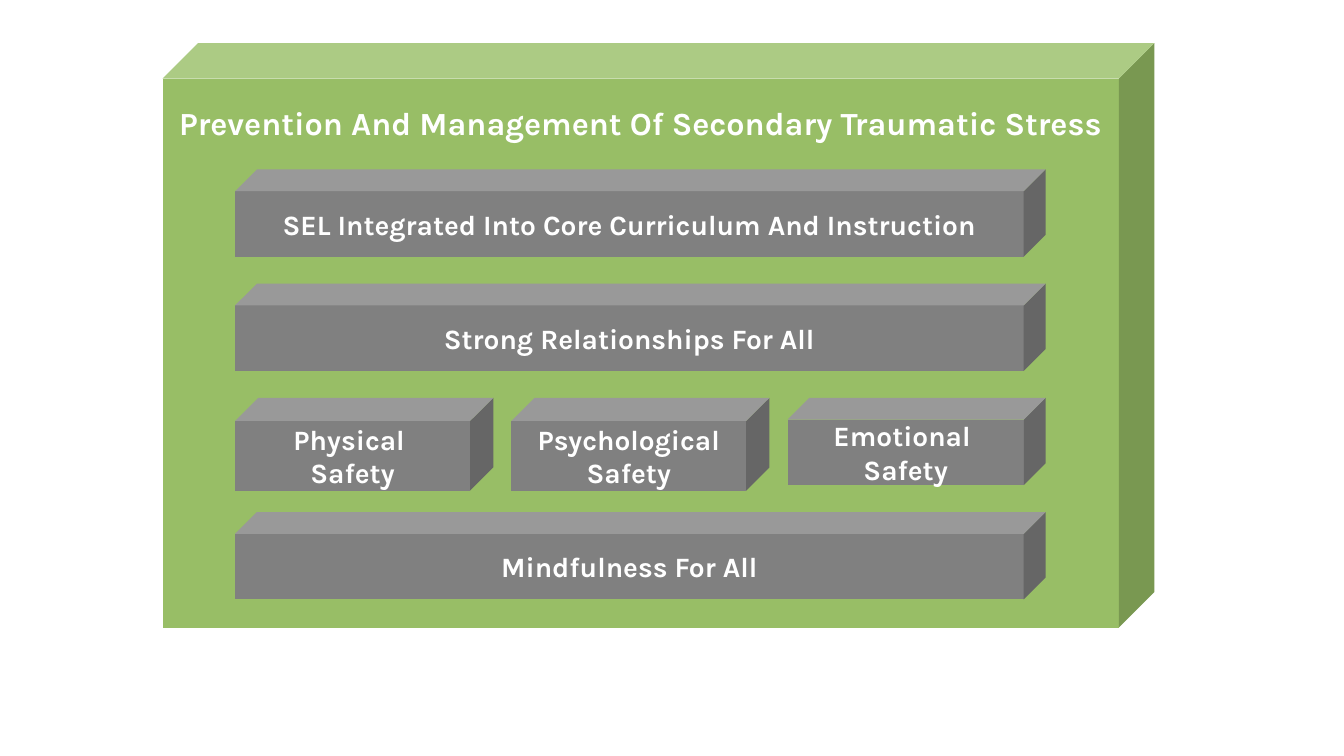
from pptx import Presentation
from pptx.dml.color import RGBColor
from pptx.enum.shapes import MSO_SHAPE
from pptx.enum.text import MSO_ANCHOR, PP_ALIGN
from pptx.util import Inches, Pt

CUBE = MSO_SHAPE.CUBE
TOP, MIDDLE = MSO_ANCHOR.TOP, MSO_ANCHOR.MIDDLE
CENTER = PP_ALIGN.CENTER
COLORS = {"frame": "98BE66", "block": "808080", "text": "FFFFFF"}
FONT = "Karla"

# Widescreen page, 16 to 9
deck = Presentation()
deck.slide_width = Inches(10)
deck.slide_height = Inches(10 * 9 / 16)
page = deck.slides.add_slide(deck.slide_layouts[6])


def add_cube(left, top, width, height, lines, color, size=15, anchor=MIDDLE, inset=0):
    cube = page.shapes.add_shape(
        CUBE, Inches(left), Inches(top), Inches(width), Inches(height))
    cube.shadow.inherit = False
    cube.fill.solid()
    cube.fill.fore_color.rgb = RGBColor.from_string(COLORS[color])
    cube.line.fill.background()
    frame = cube.text_frame
    frame.word_wrap = True
    frame.vertical_anchor = anchor
    frame.margin_left = frame.margin_right = frame.margin_bottom = 0
    frame.margin_top = Inches(inset)
    for index, line in enumerate(lines):
        para = frame.add_paragraph() if index else frame.paragraphs[0]
        para.alignment = CENTER
        span = para.add_run()
        span.text = line
        span.font.name = FONT
        span.font.size = Pt(size)
        span.font.bold = True
        span.font.color.rgb = RGBColor.from_string(COLORS["text"])
    return cube


# Surrounding frame with the title near the top of its front face
frame_cube = add_cube(
    1.21, 0.32, 7.38, 4.35,
    ["Prevention And Management Of Secondary Traumatic Stress"],
    "frame", size=17.25, anchor=TOP, inset=0.18)
frame_cube.adjustments[0] = 0.061

# Rows share a left edge and an equal vertical step
LEFT, FIRST_ROW, ROW_STEP = 1.75, 1.26, 0.85
BAR_WIDTH, BLOCK_WIDTH = 6.03, 1.92
COLUMN_STEP = (BAR_WIDTH - BLOCK_WIDTH) / 2

# Full-width bars
bars = [
    (0, "SEL Integrated Into Core Curriculum And Instruction"),
    (1, "Strong Relationships For All"),
    (3, "Mindfulness For All"),
]
for row, label in bars:
    add_cube(LEFT, FIRST_ROW + row * ROW_STEP, BAR_WIDTH, 0.65, [label], "block")

# Three safety blocks in the third row
safety_blocks = [
    (["Physical ", "Safety"], 0.69),
    (["Psychological Safety"], 0.69),
    (["Emotional ", "Safety"], 0.65),
]
for column, (lines, height) in enumerate(safety_blocks):
    add_cube(LEFT + column * COLUMN_STEP, FIRST_ROW + 2 * ROW_STEP,
             BLOCK_WIDTH, height, lines, "block")

deck.save("out.pptx")
